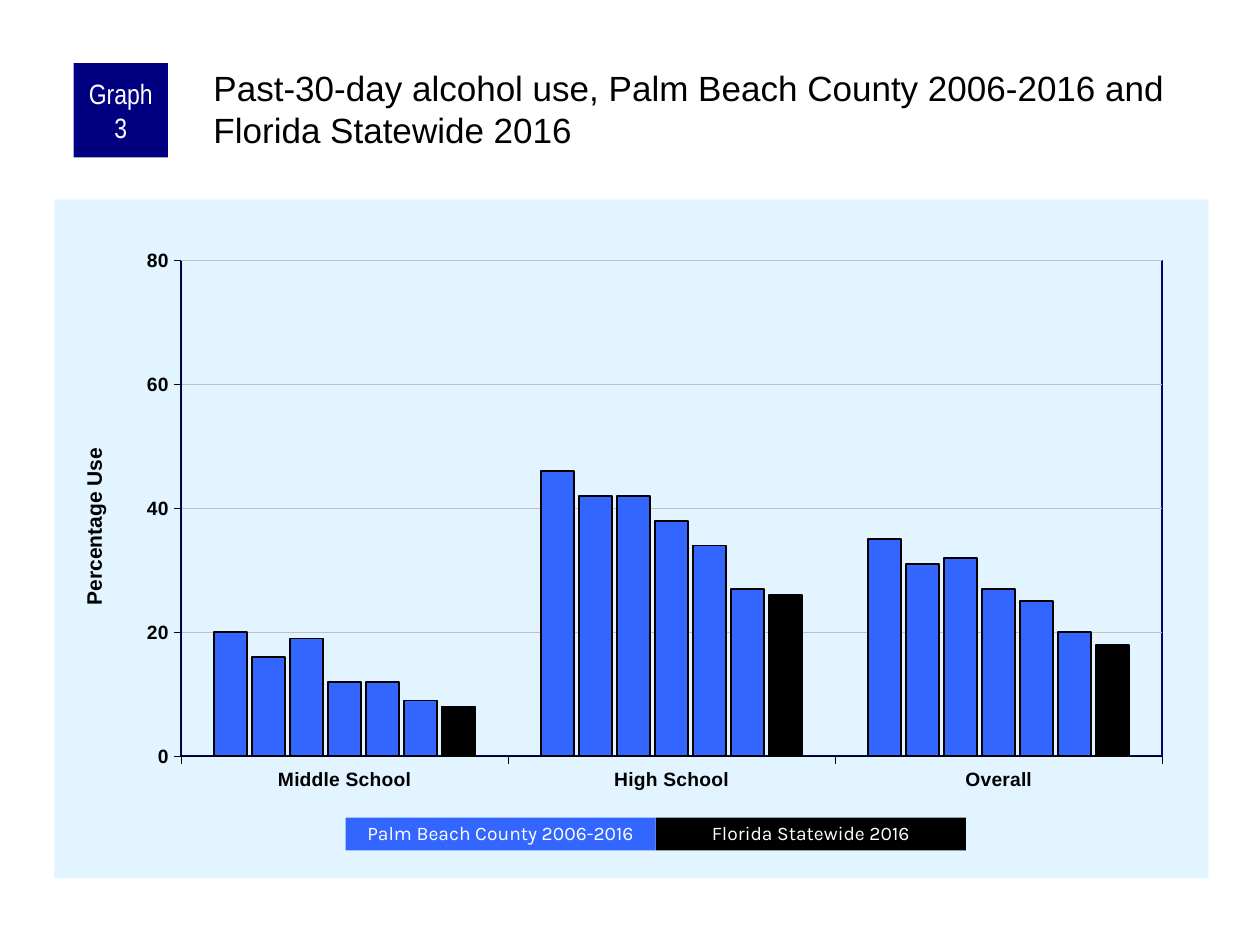
from pptx import Presentation
from pptx.chart.data import CategoryChartData
from pptx.dml.color import RGBColor
from pptx.enum.chart import XL_CHART_TYPE, XL_TICK_MARK
from pptx.enum.shapes import MSO_SHAPE
from pptx.enum.text import MSO_ANCHOR, PP_ALIGN
from pptx.oxml import parse_xml
from pptx.oxml.ns import nsdecls, qn
from pptx.util import Pt

COLUMNS = XL_CHART_TYPE.COLUMN_CLUSTERED
OUTSIDE, NO_TICK = XL_TICK_MARK.OUTSIDE, XL_TICK_MARK.NONE
RECT = MSO_SHAPE.RECTANGLE
MIDDLE, TOP = MSO_ANCHOR.MIDDLE, MSO_ANCHOR.TOP
CENTER, LEFT = PP_ALIGN.CENTER, PP_ALIGN.LEFT

BLACK, WHITE, NAVY, BLUE = "000000", "FFFFFF", "000080", "3366FF"
PALE, GREY = "E1F4FF", "C0C0C0"

SCHOOLS = ["Middle School", "High School", "Overall"]
COUNTY_USE = [
    (20, 46, 35),
    (16, 42, 31),
    (19, 42, 32),
    (12, 38, 27),
    (12, 34, 25),
    (9, 27, 20),
]
STATE_USE = (8, 26, 18)


def rgb(color):
    return RGBColor.from_string(color)


def set_line(line, color, width):
    line.color.rgb = rgb(color)
    line.width = Pt(width)


def layout_xml(*box, inner=False):
    target = '<c:layoutTarget val="inner"/>' if inner else ""
    modes = "".join(f'<c:{a}Mode val="edge"/>' for a in "xy")
    values = "".join(f'<c:{a} val="{v}"/>' for a, v in zip("xywh", box))
    return parse_xml(
        f"<c:layout {nsdecls('c')}><c:manualLayout>{target}{modes}{values}"
        "</c:manualLayout></c:layout>"
    )


def area_xml(fill=None, line=None):
    def solid(color):
        return f'<a:solidFill><a:srgbClr val="{color}"/></a:solidFill>' if color else "<a:noFill/>"

    return parse_xml(
        f"<c:spPr {nsdecls('c', 'a')}>{solid(fill)}"
        f'<a:ln w="12700">{solid(line)}</a:ln></c:spPr>'
    )


class Slide:
    font = "Arial"

    def __init__(self, prs):
        self.s = prs.slides.add_slide(prs.slide_layouts[6])

    def set_text(self, sp, text, size, color, font, align, anchor, insets, spacing=None):
        tf = sp.text_frame
        tf.word_wrap = True
        tf.vertical_anchor = anchor
        tf.margin_left, tf.margin_top, tf.margin_right, tf.margin_bottom = map(Pt, insets)
        p = tf.paragraphs[0]
        p.text = text
        p.alignment = align
        p.line_spacing = spacing
        p.font.size = Pt(size)
        p.font.name = font
        p.font.color.rgb = rgb(color)

    def title(self, text, *box):
        sp = self.s.shapes.add_textbox(*map(Pt, box))
        self.set_text(sp, text, 20, BLACK, self.font, LEFT, TOP, (2, 2, 0, 0))

    def block(self, text, box, fill, size, font, insets, spacing=None):
        sp = self.s.shapes.add_shape(RECT, *map(Pt, box))
        sp.shadow.inherit = False
        sp.fill.solid()
        sp.fill.fore_color.rgb = rgb(fill)
        sp.line.fill.background()
        self.set_text(sp, text, size, WHITE, font, CENTER, MIDDLE, insets, spacing)

    def style_font(self, font, size, bold):
        font.name = self.font
        font.size = Pt(size)
        font.bold = bold
        font.color.rgb = rgb(BLACK)

    def style_axis(self, axis):
        axis.major_tick_mark = OUTSIDE
        axis.minor_tick_mark = NO_TICK
        self.style_font(axis.tick_labels.font, 11, True)
        set_line(axis.format.line, BLACK, 0.25)

    def columns(self, categories, rows, colors, axis_title, *box):
        data = CategoryChartData()
        data.categories = categories
        for n, values in enumerate(rows, 1):
            data.add_series(f"Series {n}", values)
        chart = self.s.shapes.add_chart(COLUMNS, *map(Pt, box), data).chart
        chart.has_legend = False
        chart.has_title = False
        self.style_font(chart.font, 8, False)

        plot = chart.plots[0]
        plot.gap_width = 200
        plot.overlap = -15
        plot.vary_by_categories = False
        for series, color in zip(plot.series, colors):
            series.format.fill.solid()
            series.format.fill.fore_color.rgb = rgb(color)
            set_line(series.format.line, BLACK, 1)

        self.style_axis(chart.category_axis)
        axis = chart.value_axis
        self.style_axis(axis)
        axis.minimum_scale, axis.maximum_scale, axis.major_unit = 0, 80, 20
        set_line(axis.major_gridlines.format.line, GREY, 0.25)
        p = axis.axis_title.text_frame.paragraphs[0]
        p.text = axis_title
        self.style_font(p.font, 12, True)
        self.arrange(chart, axis.axis_title.element)

    def arrange(self, chart, title):
        area = chart.element.find(qn("c:chart"))
        plot_area = area.find(qn("c:plotArea"))
        for parent in (plot_area, title):
            for old in parent.findall(qn("c:layout")):
                parent.remove(old)
        plot_area.insert(0, layout_xml(0.11, 0.09, 0.85, 0.73, inner=True))
        plot_area.append(area_xml(line=NAVY))
        title.find(qn("c:tx")).addnext(layout_xml(0.02, 0.36))
        area.addnext(area_xml(fill=PALE))


def main():
    prs = Presentation()
    prs.slide_width, prs.slide_height = Pt(720), Pt(540)
    slide = Slide(prs)
    slide.columns(
        SCHOOLS,
        COUNTY_USE + [STATE_USE],
        [BLUE] * len(COUNTY_USE) + [BLACK],
        "Percentage Use",
        31, 114, 659.5, 388,
    )
    slide.block("Graph 3", (42, 36, 54, 54), NAVY, 16, "Arial Narrow", (3.6, 0, 3.6, 0))
    slide.title(
        "Past-30-day alcohol use, Palm Beach County 2006-2016 and Florida Statewide 2016",
        120, 36, 570, 60,
    )
    keys = [("Palm Beach County 2006-2016", BLUE), ("Florida Statewide 2016", BLACK)]
    for i, (label, color) in enumerate(keys):
        box = (197.5 + i * 177.25, 467.25, 177.25, 18.75)
        slide.block(label, box, color, 11, "Karla", (7.2, 3.6, 7.2, 3.6), 0.9)
    prs.save("out.pptx")


if __name__ == "__main__":
    main()
